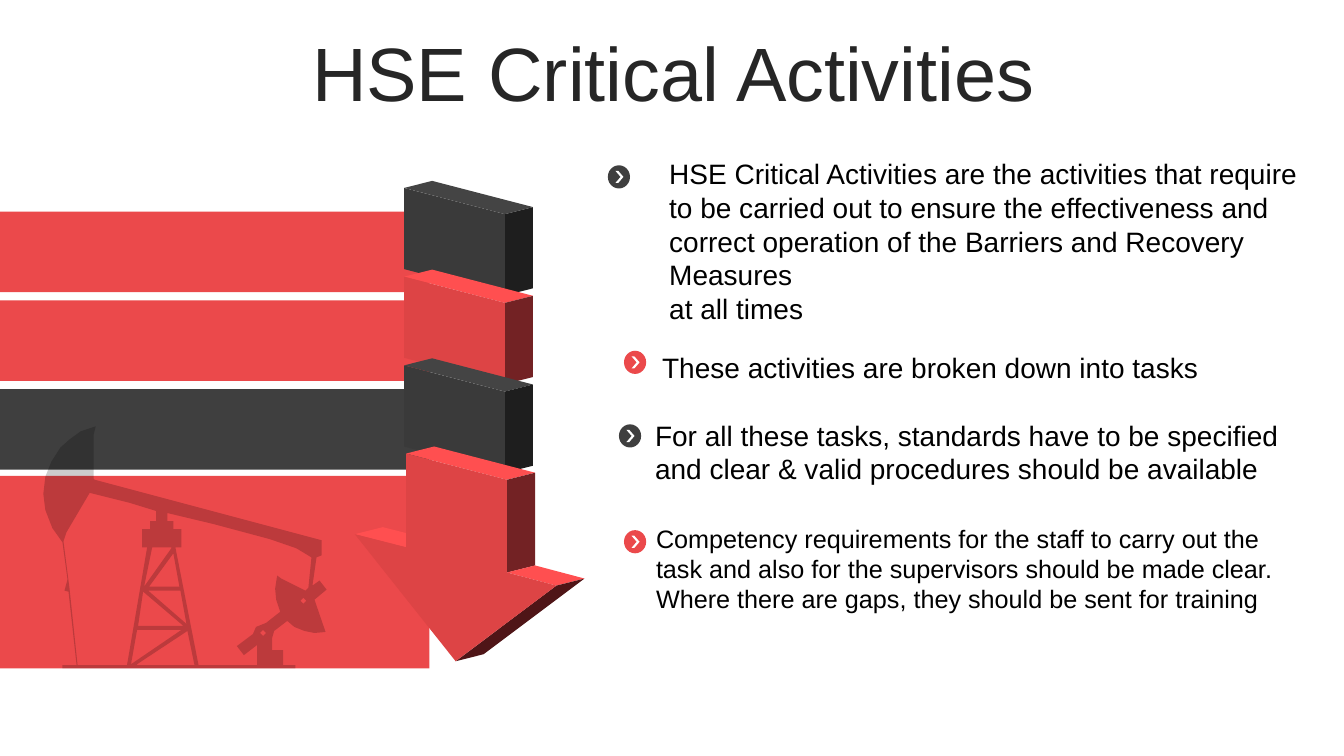
import pptx
import pptx.dml.color
import pptx.enum.shapes
import pptx.enum.text
import pptx.oxml
import pptx.oxml.ns
import pptx.util
from dataclasses import dataclass

CELL = pptx.util.Inches(0.1)
COLUMNS, ROWS = 133.33, 75
SHAPES = pptx.enum.shapes.MSO_SHAPE
ANCHOR = pptx.enum.text.MSO_ANCHOR


@dataclass(frozen=True)
class Theme:
    font: str = "Arial"
    title_size: int = 54
    body_size: int = 20
    small_size: int = 18
    title: str = "262626"
    body: str = "000000"
    white: str = "FFFFFF"
    red: str = "EB494B"
    dark: str = "3F3F3F"
    red_faces: tuple = ("DD4445", "FF4F50", "732224")
    dark_faces: tuple = ("3A3A3A", "444444", "1E1E1E")
    red_underside: str = "4F1517"


THEME = Theme()

BARS = [
    (21, 8, THEME.red),
    (29.8, 8, THEME.red),
    (38.6, 8, THEME.dark),
    (47.2, 19.1, THEME.red),
]

BULLETS = [
    (60.3, 16.4, THEME.dark),
    (61.9, 34.8, THEME.red),
    (61.4, 42.1, THEME.dark),
    (61.9, 52.6, THEME.red),
]

PUMP_JACK = [
    [(9.5, 42.3), (9.3, 43.1), (9.3, 47.5), (9.4, 47.6), (31.9, 53.6),
     (31.9, 55.1), (31.4, 55.3), (31, 58.1), (31.7, 57.6), (32.4, 58.5),
     (31.2, 59.5), (32.3, 62.7), (31.2, 62.8), (30.2, 62.6), (29.2, 62.2),
     (28.5, 61.6), (27.2, 62.6), (27, 63.3), (27, 64.5), (28.1, 64.5),
     (28.1, 66), (29.3, 66), (29.3, 66.3), (6.2, 66.3), (6.2, 66),
     (7.6, 66), (6.8, 58.7), (6.4, 58.6), (6.7, 57.5), (6.2, 53.8),
     (5.2, 52.4), (4.5, 50.6), (4.3, 49), (4.5, 47.3), (5.1, 45.8),
     (6, 44.4), (6.9, 43.6), (8, 42.8)],
    [(27.8, 60.7), (27.4, 59.5), (27.3, 58.4), (27.5, 57.1), (27.9, 57.4),
     (30.3, 58.6), (30.6, 58.3), (30.9, 55.3), (29.4, 54.4), (26.8, 53.5),
     (21.2, 52), (16.6, 50.9), (16.6, 51.7), (17.2, 51.7), (17.2, 52.5),
     (18, 52.5), (18, 54.3), (17.4, 54.3), (19.7, 66), (25.5, 66),
     (25.5, 64), (24.2, 65), (23.5, 64.1), (25.1, 62.9), (25.4, 62.2),
     (26.4, 61.8)],
    [(7.7, 66), (12.6, 66), (14.6, 54.3), (14.1, 54.3), (14.1, 52.5),
     (14.9, 52.5), (14.9, 51.7), (15.5, 51.7), (15.5, 50.7), (12.9, 49.9),
     (8.9, 48.9), (6.6, 52.8), (6.3, 53.7), (6.9, 58.4)],
    [(19.3, 66), (18.6, 62.6), (13.6, 65.9), (13.6, 66)],
    [(18.2, 62.1), (14.2, 58.7), (13.7, 62.1)],
    [(13, 65.9), (18, 62.5), (13.6, 62.5)],
    [(14.7, 58.6), (18.5, 61.9), (17.9, 58.6)],
    [(17.2, 54.9), (14.8, 58.2), (17.8, 58.2)],
    [(14.3, 58.2), (17, 54.4), (17, 54.3), (15.1, 54.3)],
    [(30.1, 59.9), (30.4, 59.6), (30.1, 59.3), (29.8, 59.6)],
    [(26.1, 63.1), (26.4, 62.8), (26.1, 62.5), (25.8, 62.8)],
]


def grid(cells):
    return pptx.util.Emu(round(cells * CELL))


def paint(shape, color, alpha=None):
    shape.shadow.inherit = False
    shape.line.fill.background()
    shape.fill.solid()
    shape.fill.fore_color.rgb = pptx.dml.color.RGBColor.from_string(color)
    if alpha is not None:
        srgb = shape.fill._xPr.find(".//" + pptx.oxml.ns.qn("a:srgbClr"))
        node = pptx.oxml.parse_xml(
            f'<a:alpha {pptx.oxml.ns.nsdecls("a")} val="{alpha * 1000}"/>')
        srgb.append(node)


def add_preset(page, kind, left, top, width, height, color):
    shape = page.shapes.add_shape(kind, *map(grid, (left, top, width, height)))
    paint(shape, color)
    return shape


def add_outline(page, contours, color, alpha=None):
    points = [[(grid(x), grid(y)) for x, y in contour] for contour in contours]
    builder = page.shapes.build_freeform(*points[0][0])
    for index, contour in enumerate(points):
        if index:
            builder.move_to(*contour[0])
        builder.add_line_segments(contour[1:], close=True)
    paint(builder.convert_to_shape(), color, alpha)


def write_text(frame, lines, size=THEME.body_size, color=THEME.body,
               anchor=ANCHOR.TOP, align=None, spacing=None):
    frame.word_wrap = True
    frame.vertical_anchor = anchor
    for index, line in enumerate(lines):
        para = frame.add_paragraph() if index else frame.paragraphs[0]
        para.alignment = align
        para.line_spacing = spacing
        span = para.add_run()
        span.text = line
        span.font.name = THEME.font
        span.font.size = pptx.util.Pt(size)
        span.font.color.rgb = pptx.dml.color.RGBColor.from_string(color)


def add_text(page, left, top, width, height, lines, **style):
    box = page.shapes.add_textbox(*map(grid, (left, top, width, height)))
    write_text(box.text_frame, lines, **style)
    box.text_frame.auto_size = pptx.enum.text.MSO_AUTO_SIZE.SHAPE_TO_FIT_TEXT


def add_title(page, text):
    title = page.shapes.title
    title.left, title.top, title.width, title.height = map(
        grid, (3.5, 3.7, 126.6, 7.9))
    write_text(title.text_frame, [text], size=THEME.title_size,
               color=THEME.title, anchor=ANCHOR.MIDDLE,
               align=pptx.enum.text.PP_ALIGN.CENTER, spacing=0.9)
    title.text_frame.auto_size = pptx.enum.text.MSO_AUTO_SIZE.NONE


def extrude(page, edge, color):
    (x1, y1), (x2, y2) = edge
    back_x, back_y = 2.78, -0.7
    add_outline(page, [[(x1, y1), (x1 + back_x, y1 + back_y),
                        (x2 + back_x, y2 + back_y), (x2, y2)]], color)


def add_block(page, top, faces):
    left, right, drop, height = 40.1, 50.1, 2.6, 8.05
    front = [(left, top), (right, top + drop),
             (right, top + drop + height), (left, top + height)]
    for edge, color in zip((front[:2], front[1:3]), faces[1:]):
        extrude(page, edge, color)
    add_outline(page, [front], faces[0])


def add_arrow(page):
    front = [(40.3, 45), (50.3, 47.6), (50.3, 56.8), (55.2, 58.1),
             (45.2, 65.6), (35.2, 53), (40.3, 54.3)]
    face, top, side = THEME.red_faces
    edge_colors = {5: top, 0: top, 1: side, 2: top, 3: THEME.red_underside}
    for start, color in edge_colors.items():
        extrude(page, front[start:start + 2], color)
    add_outline(page, [front], face)


def add_bullet(page, left, top, color):
    add_preset(page, SHAPES.OVAL, left, top, 2.2, 2.3, color)
    chevron = add_preset(page, SHAPES.CHEVRON, left + 0.75, top + 0.55,
                         0.8, 1.2, THEME.white)
    chevron.adjustments[0] = 0.65


def main():
    deck = pptx.Presentation()
    deck.slide_width, deck.slide_height = grid(COLUMNS), grid(ROWS)
    page = deck.slides.add_slide(deck.slide_layouts[5])
    add_title(page, "HSE Critical Activities")
    for top, height, color in BARS:
        add_preset(page, SHAPES.RECTANGLE, 0, top, 42.6, height, color)
    block_faces = (THEME.dark_faces, THEME.red_faces, THEME.dark_faces)
    for index, faces in enumerate(block_faces):
        add_block(page, 18.65 + 8.8 * index, faces)
    add_arrow(page)
    add_outline(page, PUMP_JACK, THEME.body, alpha=20)
    for bullet in BULLETS:
        add_bullet(page, *bullet)
    add_text(page, 65.4, 15, 69.2, 17.8, [
        "HSE Critical Activities are the activities that require",
        "to be carried out to ensure the effectiveness and",
        "correct operation of the Barriers and Recovery Measures",
        "at all times"], anchor=ANCHOR.MIDDLE)
    add_text(page, 64.7, 34.2, 69.2, 4.4, [
        "These activities are broken down into tasks"], anchor=ANCHOR.MIDDLE)
    add_text(page, 64, 41, 66.7, 7.7, [
        "For all these tasks, standards have to be specified "
        "and clear & valid procedures should be available"])
    add_text(page, 64.1, 51.4, 66.7, 10.1, [
        "Competency requirements for the staff to carry out the",
        "task and also for the supervisors should be made clear.",
        "Where there are gaps, they should be sent for training"],
        size=THEME.small_size)
    deck.save("out.pptx")


if __name__ == "__main__":
    main()
